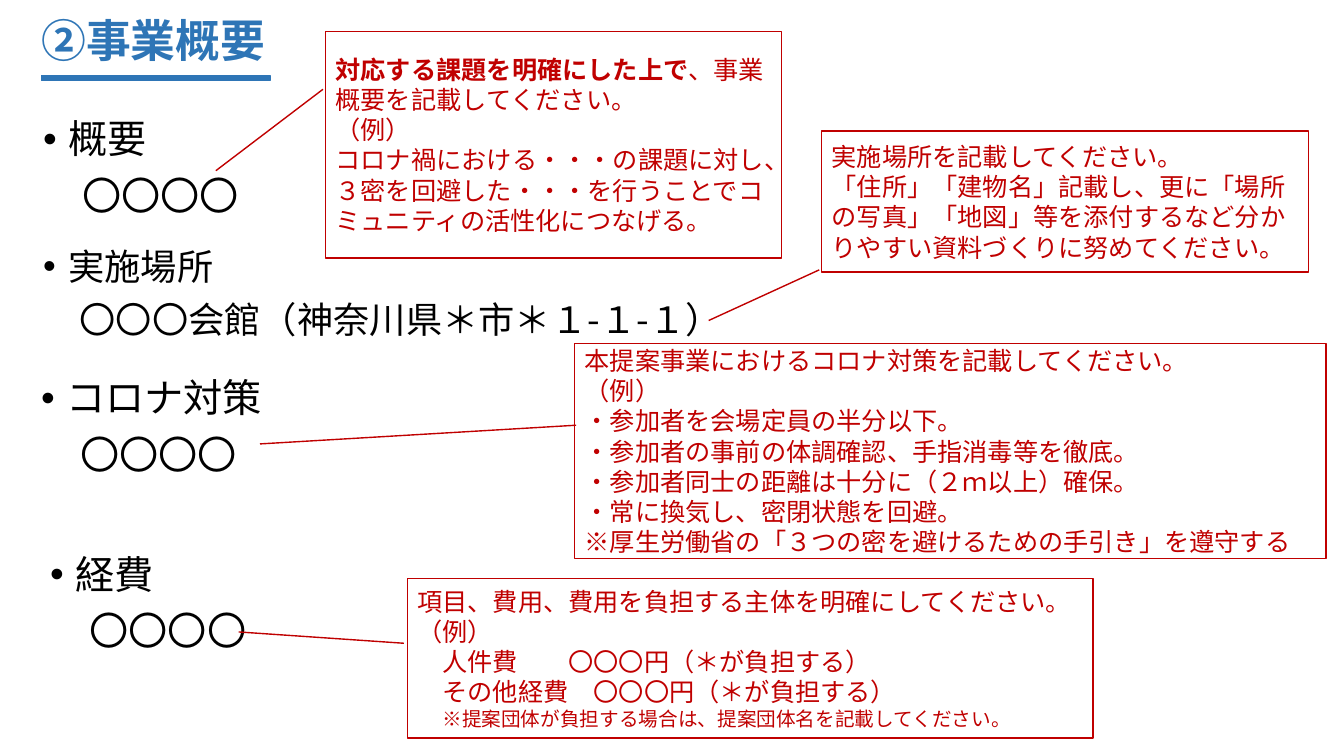
from lxml import etree
from pptx import Presentation
from pptx import util as u
from pptx.dml.color import RGBColor
from pptx.enum import shapes, text
from pptx.oxml.ns import qn

FONT = "Noto Sans CJK JP"
COL = {"ink": "000000", "note": "C00000", "head": "2E75B6", "back": "FFFFFF"}


def rgb(name):
    return RGBColor.from_string(COL[name])


def add_run(para, words, size=18, color="ink", bold=False):
    run = para.add_run()
    run.text = words
    font = run.font
    font.size, font.bold = u.Pt(size), bold
    font.color.rgb = rgb(color)
    font.name = FONT
    etree.SubElement(font._element, qn("a:ea"), typeface=FONT)


def add_text(frame, words, first=False, left=0, indent=0, line=1.0,
             before=0, bullet=False, tab=None, **style):
    """Add a paragraph; words is a string or a list of (string, bold)."""
    para = frame.paragraphs[0] if first else frame.add_paragraph()
    para.alignment = text.PP_ALIGN.LEFT
    para.line_spacing, para.space_before = line, u.Pt(before)
    props = para._p.get_or_add_pPr()
    props.set("marL", str(u.Inches(left)))
    props.set("indent", str(u.Inches(indent)))
    if bullet:
        etree.SubElement(props, qn("a:buFont"), typeface="Arial")
        etree.SubElement(props, qn("a:buChar"), char="•")
    else:
        etree.SubElement(props, qn("a:buNone"))
    if tab:
        stops = etree.SubElement(props, qn("a:tabLst"))
        etree.SubElement(stops, qn("a:tab"), pos=str(u.Inches(tab)), algn="l")
    runs = [(words, False)] if isinstance(words, str) else words
    for part, bold in runs:
        add_run(para, part, bold=bold, **style)


def paint(shape, fill, line):
    shape.shadow.inherit = False
    shape.fill.solid()
    shape.fill.fore_color.rgb = rgb(fill)
    shape.line.color.rgb = rgb(line)
    shape.line.width = u.Pt(1)


def add_title(slide, box, words):
    left, top, width, height = box
    title = slide.shapes.title
    title.left, title.top, title.width, title.height = map(u.Inches, box)
    frame = title.text_frame
    frame.word_wrap = True
    frame.auto_size = text.MSO_AUTO_SIZE.NONE
    frame.vertical_anchor = text.MSO_ANCHOR.MIDDLE
    add_text(frame, [(words, True)], first=True, line=0.9, size=32, color="head")
    # Rule under the title
    rule = slide.shapes.add_shape(
        shapes.MSO_SHAPE.RECTANGLE, u.Inches(left + 0.1),
        u.Inches(top + height - 0.04), u.Inches(width - 0.38), u.Inches(0.05))
    paint(rule, "head", "head")


def add_topic(slide, box, label, entry, size=28):
    frame = slide.shapes.add_textbox(*map(u.Inches, box)).text_frame
    frame.word_wrap = True
    look = dict(line=0.9, before=10, size=size)
    add_text(frame, label, first=True, left=0.25, indent=-0.25, bullet=True, **look)
    # The entry starts one full-width character in
    add_text(frame, entry, indent=round(size / 72, 2), **look)


def add_note(slide, box, tail, lines):
    note = slide.shapes.add_shape(shapes.MSO_SHAPE.LINE_CALLOUT_1, *map(u.Inches, box))
    paint(note, "back", "note")
    for i, value in enumerate(tail):
        note.adjustments[i] = value
    frame = note.text_frame
    frame.word_wrap = True
    frame.vertical_anchor = text.MSO_ANCHOR.MIDDLE
    for i, (words, style) in enumerate(lines):
        add_text(frame, words, first=i == 0, color="note", **style)


def plain(*lines):
    return [(words, {}) for words in lines]


TOPICS = [
    ((0.33, 1.14, 4.02, 1.09), "概要", "〇〇〇〇", 28),
    ((0.33, 2.42, 7.01, 1.17), "実施場所", "〇〇〇会館（神奈川県＊市＊１-１-１）", 25.9),
    ((0.31, 3.71, 7.01, 1.17), "コロナ対策", "〇〇〇〇", 28),
    ((0.4, 5.46, 2.5, 1.87), "経費", "〇〇〇〇", 28),
]

# Box, tail (start y, x, end y, x as shares of the box), lines
NOTES = [
    ((3.23, 0.31, 4.52, 2.25), (0.256, -0.006, 0.615, -0.241), plain(
        [("対応する課題を明確にした上で", True), ("、事業概要を記載してください。", False)],
        "（例）",
        "コロナ禍における・・・の課題に対し、３密を回避した・・・を行うことで"
        "コミュニティの活性化につなげる。")),
    ((8.15, 1.3, 4.83, 1.4), (0.984, -0.005, 1.343, -0.232), plain(
        "実施場所を記載してください。",
        "「住所」「建物名」記載し、更に「場所の写真」「地図」等を添付するなど"
        "分かりやすい資料づくりに努めてください。")),
    ((5.7, 3.41, 7.45, 2.13), (0.38, 0.002, 0.467, -0.419), plain(
        "本提案事業におけるコロナ対策を記載してください。",
        "（例）",
        "・参加者を会場定員の半分以下。",
        "・参加者の事前の体調確認、手指消毒等を徹底。",
        "・参加者同士の距離は十分に（２ｍ以上）確保。",
        "・常に換気し、密閉状態を回避。",
        "※厚生労働省の「３つの密を避けるための手引き」を遵守する")),
    ((4.04, 5.74, 6.8, 1.58), (0.406, -0.005, 0.335, -0.246), plain(
        "項目、費用、費用を負担する主体を明確にしてください。",
        "（例）") + [
        ("人件費\t〇〇〇円（＊が負担する）", dict(indent=0.25, tab=2)),
        ("その他経費　〇〇〇円（＊が負担する）", dict(indent=0.25)),
        ("※提案団体が負担する場合は、提案団体名を記載してください。",
         dict(indent=0.25, size=14))]),
]


def main():
    deck = Presentation()
    deck.slide_width, deck.slide_height = u.Inches(13.33), u.Inches(7.5)
    slide = deck.slides.add_slide(deck.slide_layouts[5])
    add_title(slide, (0.31, 0.07, 2.65, 0.72), "②事業概要")
    for topic in TOPICS:
        add_topic(slide, *topic)
    for note in NOTES:
        add_note(slide, *note)
    deck.save("out.pptx")


if __name__ == "__main__":
    main()
